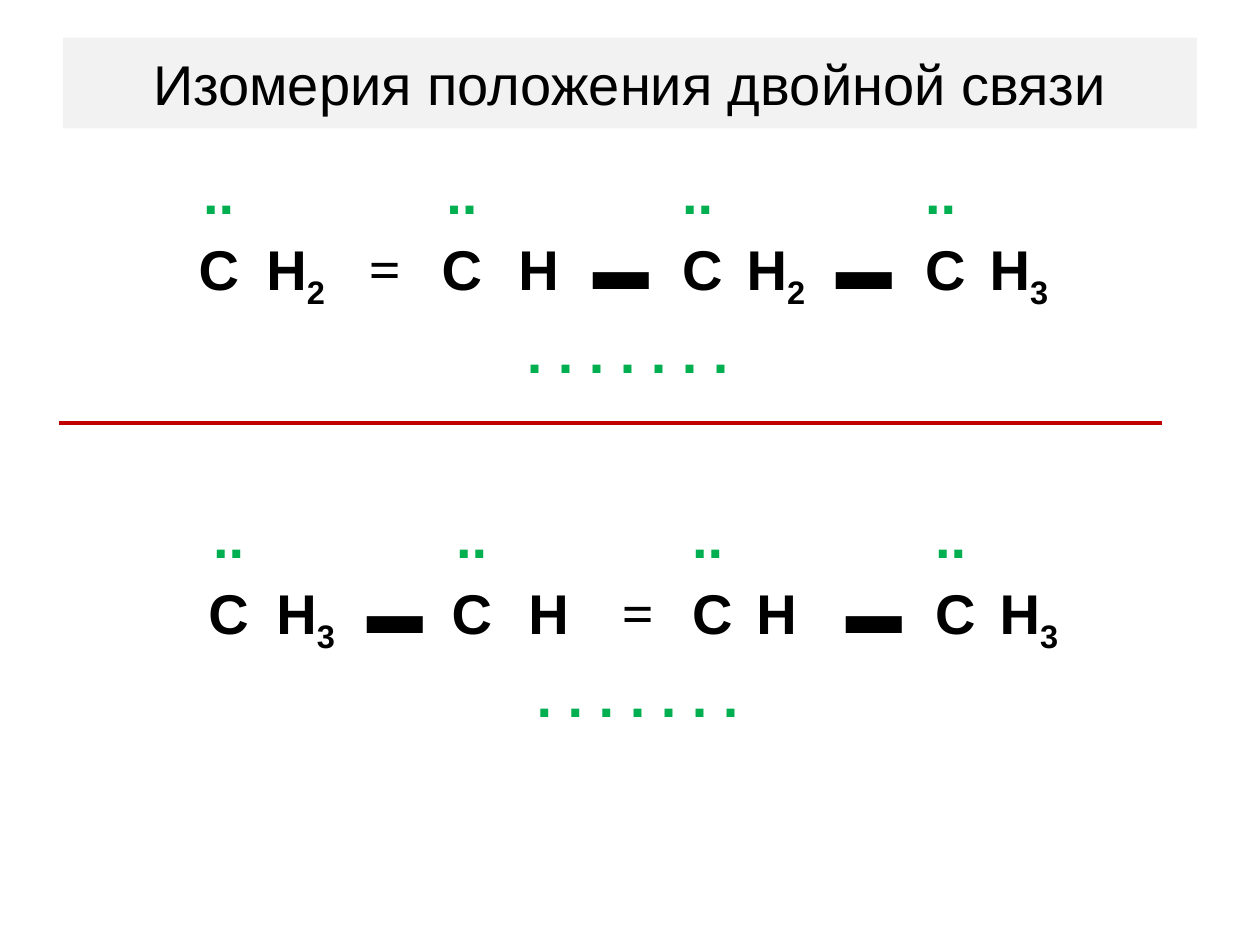
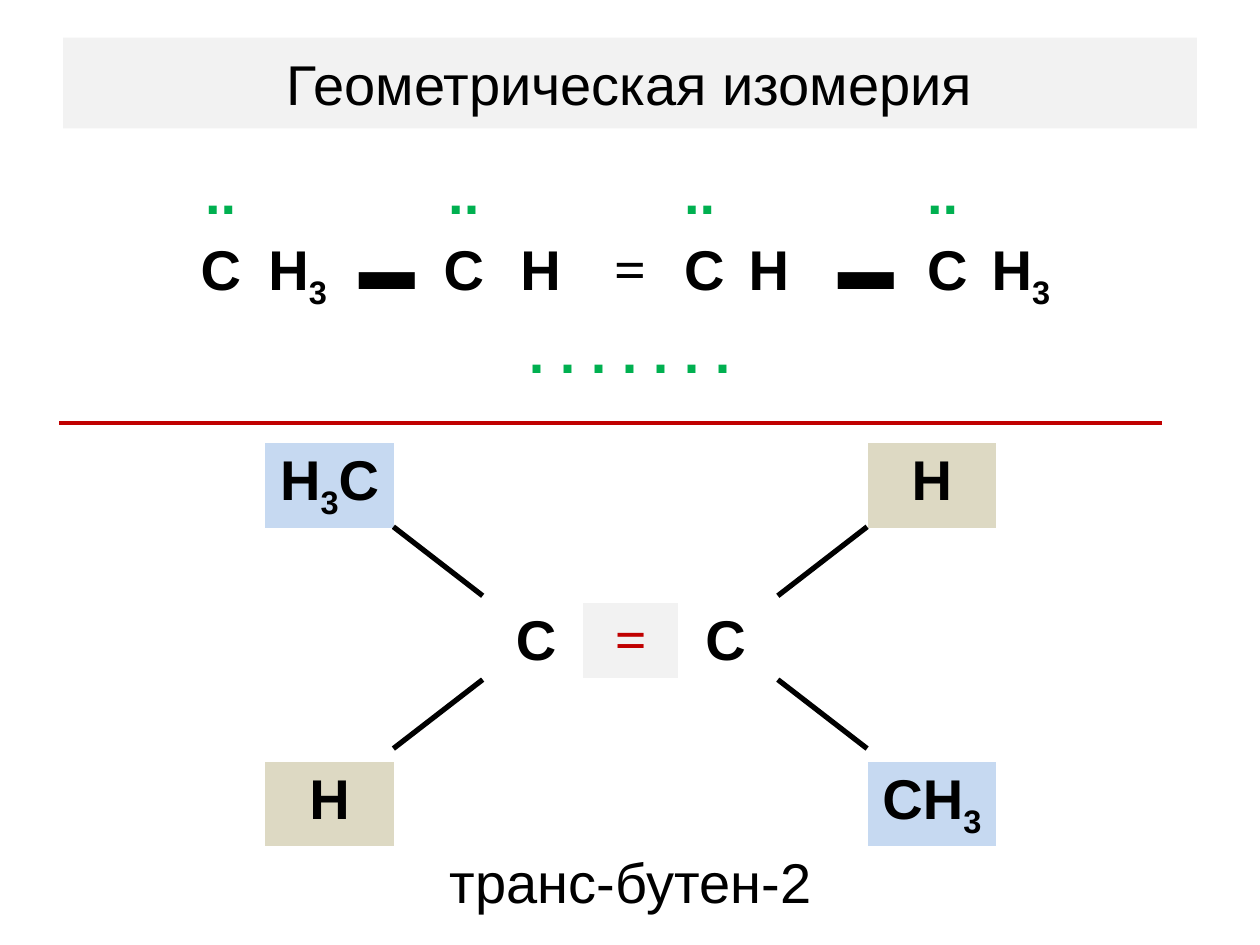
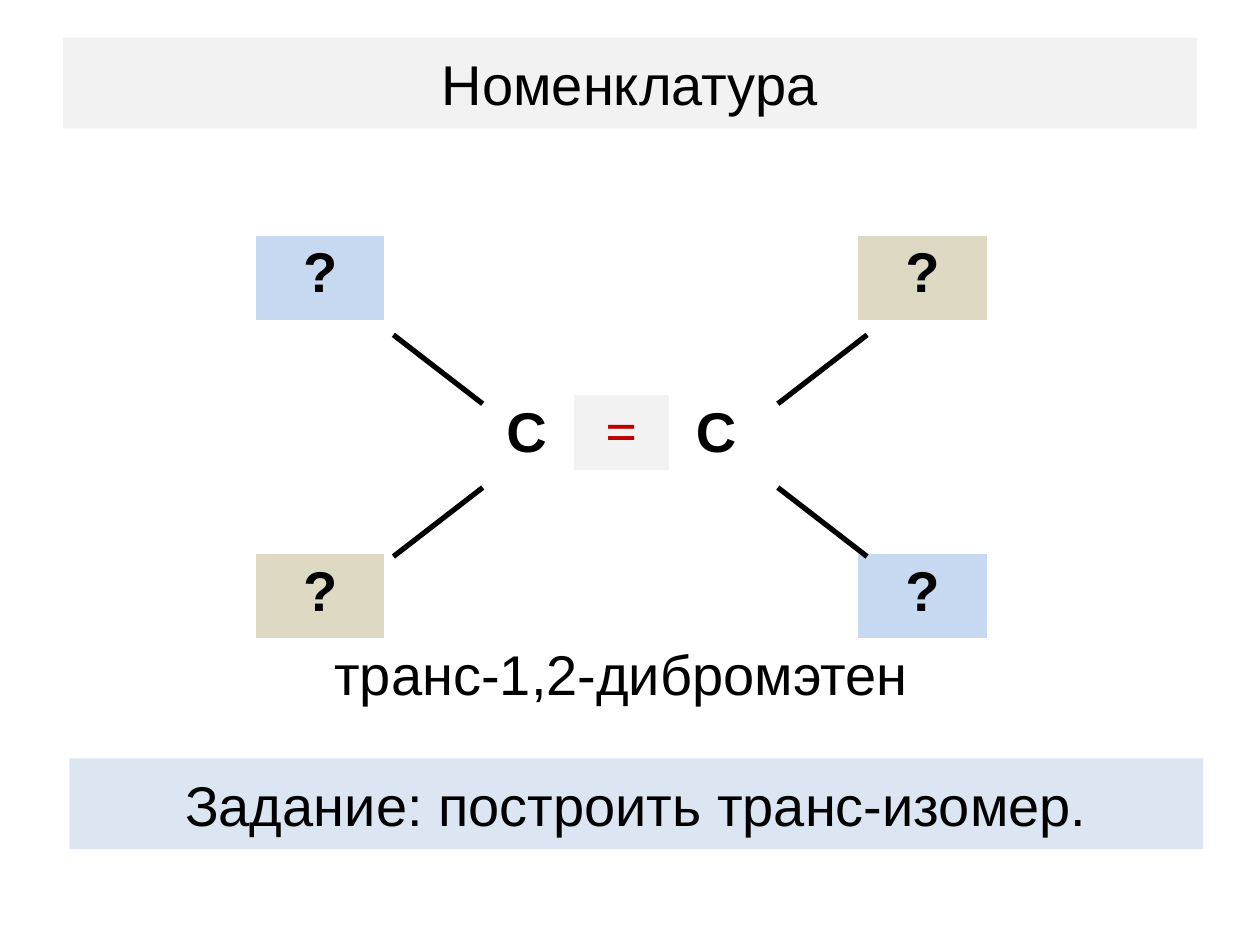
from itertools import groupby

from lxml.etree import SubElement
from pptx import Presentation
from pptx.dml.color import RGBColor
from pptx.enum.shapes import MSO_CONNECTOR, MSO_SHAPE
from pptx.enum.text import MSO_ANCHOR, PP_ALIGN
from pptx.oxml.ns import qn
from pptx.util import Cm, Pt

COLORS = {
    "text": "000000",
    "electron": "00B050",
    "accent": "C00000",
    "band": "F2F2F2",
    "task": "DCE6F2",
    "blue": "C6D9F1",
    "sand": "DDD9C3",
}
TEXT_FONT, BOND_FONT = "Arial", "Times New Roman"
TEXT_SIZE = Pt(32)
BONDS = "=▬"
NO_GRID_STYLE = "{2D5ABB26-0587-4C30-8999-92F81FD0307C}"
BAND_SIZE = (22.86, 1.83)

# Formula columns repeat as carbon, hydrogen, bond
FORMULA_COLUMNS = ([1.3, 1.8, 1.8] * 4)[:-1]
FORMULA_ROWS = [1.52, 1.68, 1.55]
MOLECULE_COLUMNS = [2.59] + [1.91] * 5 + [2.59]
MOLECULE_ROWS = [1.7, 1.52, 1.5, 1.7, 1.7, 1.5]


def rgb(name):
    return RGBColor.from_string(COLORS[name])


def paint(shape_or_cell, color):
    shape_or_cell.fill.solid()
    shape_or_cell.fill.fore_color.rgb = rgb(color)


def write(frame, text, color="text", bold=False, align=PP_ALIGN.CENTER, formula=False):
    """Write one paragraph; in a formula, digits become subscripts."""
    paragraph = frame.paragraphs[0]
    paragraph.alignment = align
    paragraph.font.name = BOND_FONT if text in BONDS else TEXT_FONT
    paragraph.font.size = TEXT_SIZE
    paragraph.font.bold = bold
    paragraph.font.color.rgb = rgb(color)
    parts = groupby(text, str.isdigit) if formula else [(False, text)]
    for is_index, letters in parts:
        run = paragraph.add_run()
        run.text = "".join(letters)
        if is_index:
            run._r.get_or_add_rPr().set("baseline", "-25000")


def write_atom(cell, text, color="text", align=PP_ALIGN.CENTER):
    write(cell.text_frame, text, color, bold=True, align=align, formula=True)


def add_line(shapes, start, end, color, width):
    line = shapes.add_connector(MSO_CONNECTOR.STRAIGHT, *map(Cm, start + end))
    line.line.color.rgb = rgb(color)
    line.line.width = Pt(width)
    SubElement(line._element.spPr, qn("a:effectLst"))


def add_grid(slide, left, top, columns, rows):
    """Add a table without style, fills or lines."""
    grid = slide.shapes.add_table(
        len(rows), len(columns), Cm(left), Cm(top), Cm(sum(columns)), Cm(sum(rows))
    ).table
    grid.first_row = grid.horz_banding = False
    grid._tbl.tblPr.find(qn("a:tableStyleId")).text = NO_GRID_STYLE
    for column, width in zip(grid.columns, columns):
        column.width = Cm(width)
    for row, height in zip(grid.rows, rows):
        row.height = Cm(height)
    for cell in grid.iter_cells():
        cell.fill.background()
        cell.margin_left = cell.margin_right = Cm(0.19)
        cell.margin_top, cell.margin_bottom = Cm(0.13), 0
    return grid


def merge_last_row(grid):
    last = len(grid.rows) - 1
    first_cell = grid.cell(last, 0)
    first_cell.merge(grid.cell(last, len(grid.columns) - 1))
    return first_cell


def fill_band(band, left, top, text, color):
    """Place a full-width band with one centred line of text."""
    band.left, band.top = Cm(left), Cm(top)
    band.width, band.height = map(Cm, BAND_SIZE)
    paint(band, color)
    band.text_frame.vertical_anchor = MSO_ANCHOR.MIDDLE
    band.text_frame.word_wrap = True
    write(band.text_frame, text)


def add_titled_slide(deck, title):
    slide = deck.slides.add_slide(deck.slide_layouts[5])
    fill_band(slide.shapes.title, 1.27, 0.76, title, "band")
    return slide


def add_divider(slide):
    add_line(slide.shapes, (1.19, 8.53), (23.42, 8.53), "accent", 2.25)


def add_task(slide, left, top, text):
    band = slide.shapes.add_shape(MSO_SHAPE.RECTANGLE, 0, 0, 0, 0)
    band.shadow.inherit = False
    band.line.fill.background()
    fill_band(band, left, top, text, "task")


def add_formula(slide, left, top, hydrogens, bonds):
    """Add a chain of carbons with their electrons above and below."""
    grid = add_grid(slide, left, top, FORMULA_COLUMNS, FORMULA_ROWS)
    for group, hydrogen in enumerate(hydrogens):
        column = 3 * group
        align = PP_ALIGN.CENTER if group < 2 else PP_ALIGN.LEFT
        write_atom(grid.cell(0, column), "..", "electron", align)
        write_atom(grid.cell(1, column), "С", align=align)
        write_atom(grid.cell(1, column + 1), hydrogen, align=align)
    for group, bond in enumerate(bonds):
        centred = bond == "=" or group == 0
        align = PP_ALIGN.CENTER if centred else PP_ALIGN.LEFT
        write_atom(grid.cell(1, 3 * group + 2), bond, align=align)
    write_atom(merge_last_row(grid), ". . . . . . .", "electron")


def add_molecule(slide, left, top, substituents, caption):
    """Add the double-bonded pair; substituents run row by row."""
    grid = add_grid(slide, left, top, MOLECULE_COLUMNS, MOLECULE_ROWS)
    corners = [(0, 0), (0, 6), (4, 0), (4, 6)]
    for corner, text, color in zip(corners, substituents, ["blue", "sand", "sand", "blue"]):
        paint(grid.cell(*corner), color)
        write_atom(grid.cell(*corner), text)
    for column in (2, 4):
        write_atom(grid.cell(2, column), "С")
    paint(grid.cell(2, 3), "band")
    write_atom(grid.cell(2, 3), "=", "accent")
    write(merge_last_row(grid).text_frame, caption)


def add_side_bonds(slide, left, top, width=9.55, height=4.47):
    """Draw four bonds from the corners of the box towards its centre."""
    bonds = slide.shapes.add_group_shape().shapes
    reach_x, reach_y = 1.8, 1.39
    for x, step_x in ((left, reach_x), (left + width, -reach_x)):
        for y, step_y in ((top, reach_y), (top + height, -reach_y)):
            add_line(bonds, (x, y), (x + step_x, y + step_y), "text", 3)


def main():
    deck = Presentation()
    deck.slide_width, deck.slide_height = Cm(25.4), Cm(19.05)

    # Position of the double bond
    position = add_titled_slide(deck, "Изомерия положения двойной связи")
    add_formula(position, 3.76, 3.18, ["Н2", "Н", "Н2", "Н3"], "=▬▬")
    add_divider(position)
    add_formula(position, 3.96, 10.11, ["Н3", "Н", "Н", "Н3"], "▬=▬")

    # Geometric isomerism
    geometry = add_titled_slide(deck, "Геометрическая изомерия")
    add_divider(geometry)
    add_molecule(geometry, 5.35, 8.94, ["Н3С", "Н", "Н", "СН3"], "транс-бутен-2")
    add_formula(geometry, 3.8, 3.18, ["Н3", "Н", "Н", "Н3"], "▬=▬")
    add_side_bonds(geometry, 7.93, 10.62)

    # Nomenclature task
    naming = add_titled_slide(deck, "Номенклатура")
    add_molecule(naming, 5.16, 4.75, "????", "транс-1,2-дибромэтен")
    add_side_bonds(naming, 7.93, 6.75)
    add_task(naming, 1.4, 15.29, "Задание: построить транс-изомер.")

    deck.save("out.pptx")


if __name__ == "__main__":
    main()
